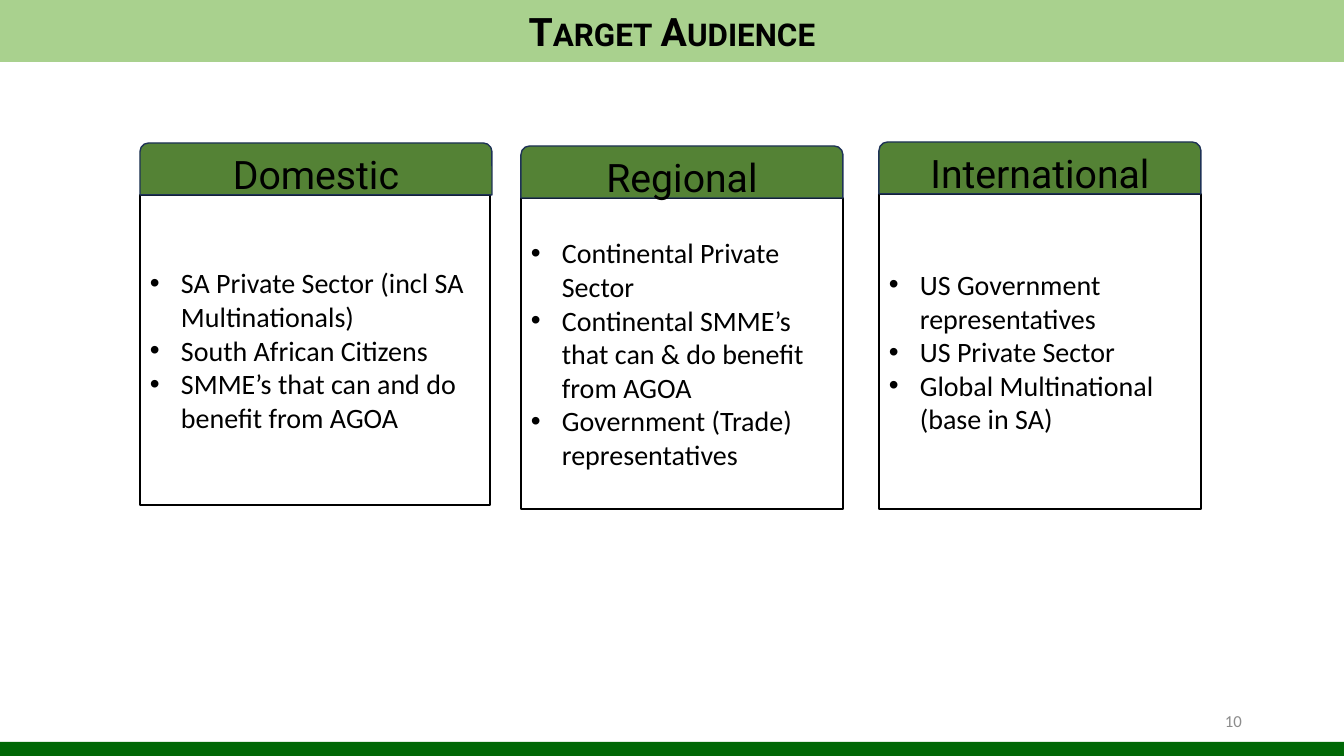
from lxml.etree import SubElement
from pptx import Presentation
from pptx.dml.color import RGBColor
from pptx.enum.shapes import MSO_SHAPE as Preset
from pptx.enum.text import MSO_ANCHOR as Anchor, PP_ALIGN as Align
from pptx.oxml.ns import qn
from pptx.util import Emu, Pt

SLIDE_WIDTH, SLIDE_HEIGHT = 1344, 756
EMU_PER_PX = 12192000 / SLIDE_WIDTH

BLACK = RGBColor(0x00, 0x00, 0x00)
WHITE = RGBColor(0xFF, 0xFF, 0xFF)
GREY = RGBColor(0x8C, 0x8C, 0x8C)
NAVY = RGBColor(0x1E, 0x32, 0x56)
LIGHT_GREEN = RGBColor(0xA9, 0xD1, 0x8E)
MID_GREEN = RGBColor(0x54, 0x82, 0x35)
DARK_GREEN = RGBColor(0x00, 0x68, 0x06)


def add_box(preset, left, top, width, height, fill, line=None):
    """Add a preset shape, measured in px."""
    lengths = [Emu(round(px * EMU_PER_PX)) for px in (left, top, width, height)]
    shape = slide.shapes.add_shape(preset, *lengths)
    shape.shadow.inherit = False
    if fill is None:
        shape.fill.background()
    else:
        shape.fill.solid()
        shape.fill.fore_color.rgb = fill
    if line is None:
        shape.line.fill.background()
    else:
        shape.line.color.rgb = line
        shape.line.width = Pt(1)
    return shape


def write(shape, text, size, font="Calibri", color=BLACK, align=Align.LEFT,
          anchor=Anchor.MIDDLE, bold=False, small_caps=False, bullet_indent=0):
    """Fill a shape with text, one paragraph a line."""
    frame = shape.text_frame
    frame.word_wrap = True
    frame.vertical_anchor = anchor
    frame.text = text
    for paragraph in frame.paragraphs:
        paragraph.alignment = align
        if bullet_indent:
            indent = round(bullet_indent * EMU_PER_PX)
            properties = paragraph._p.get_or_add_pPr()
            properties.set("marL", str(indent))
            properties.set("indent", str(-indent))
            SubElement(properties, qn("a:buFont"), typeface="Arial")
            SubElement(properties, qn("a:buChar"), char="•")
        for run in paragraph.runs:
            run.font.name = font
            run.font.size = Pt(size)
            run.font.bold = bold
            run.font.color.rgb = color
            if small_caps:
                run._r.get_or_add_rPr().set("cap", "small")


presentation = Presentation()
presentation.slide_width = Emu(round(SLIDE_WIDTH * EMU_PER_PX))
presentation.slide_height = Emu(round(SLIDE_HEIGHT * EMU_PER_PX))
slide = presentation.slides.add_slide(presentation.slide_layouts[6])

# Footer band, title band and slide number
add_box(Preset.RECTANGLE, 0, 742, SLIDE_WIDTH, 14, DARK_GREEN)
title = add_box(Preset.RECTANGLE, 0, 0, SLIDE_WIDTH, 62, LIGHT_GREEN)
write(title, "Target Audience", 28, font="Roboto", align=Align.CENTER,
      bold=True, small_caps=True)
slide_number = add_box(Preset.RECTANGLE, 950, 701, 302, 40, None)
write(slide_number, "10", 12, color=GREY, align=Align.RIGHT)

# Audience cards: heading, left, top, heading width, body width, bottom, points
HEADING_HEIGHT = 52
audiences = [
    ("Domestic", 140, 143, 352, 350, 505,
     ["SA Private Sector (incl SA Multinationals)",
      "South African Citizens",
      "SMME’s that can and do benefit from AGOA"]),
    ("Regional", 521, 146, 322, 322, 509,
     ["Continental Private Sector",
      "Continental SMME’s that can & do benefit from AGOA",
      "Government (Trade) representatives"]),
    ("International", 879, 142, 322, 322, 509,
     ["US Government representatives",
      "US Private Sector",
      "Global Multinational (base in SA)"]),
]
for name, left, top, heading_width, body_width, bottom, points in audiences:
    body_top = top + HEADING_HEIGHT
    body = add_box(Preset.RECTANGLE, left, body_top, body_width,
                   bottom - body_top, WHITE, BLACK)
    write(body, "\n".join(points), 20, bullet_indent=31)
    heading = add_box(Preset.ROUND_2_SAME_RECTANGLE, left, top, heading_width,
                      HEADING_HEIGHT, MID_GREEN, NAVY)
    write(heading, name, 28, font="Roboto", align=Align.CENTER, anchor=Anchor.TOP)

presentation.save("out.pptx")
